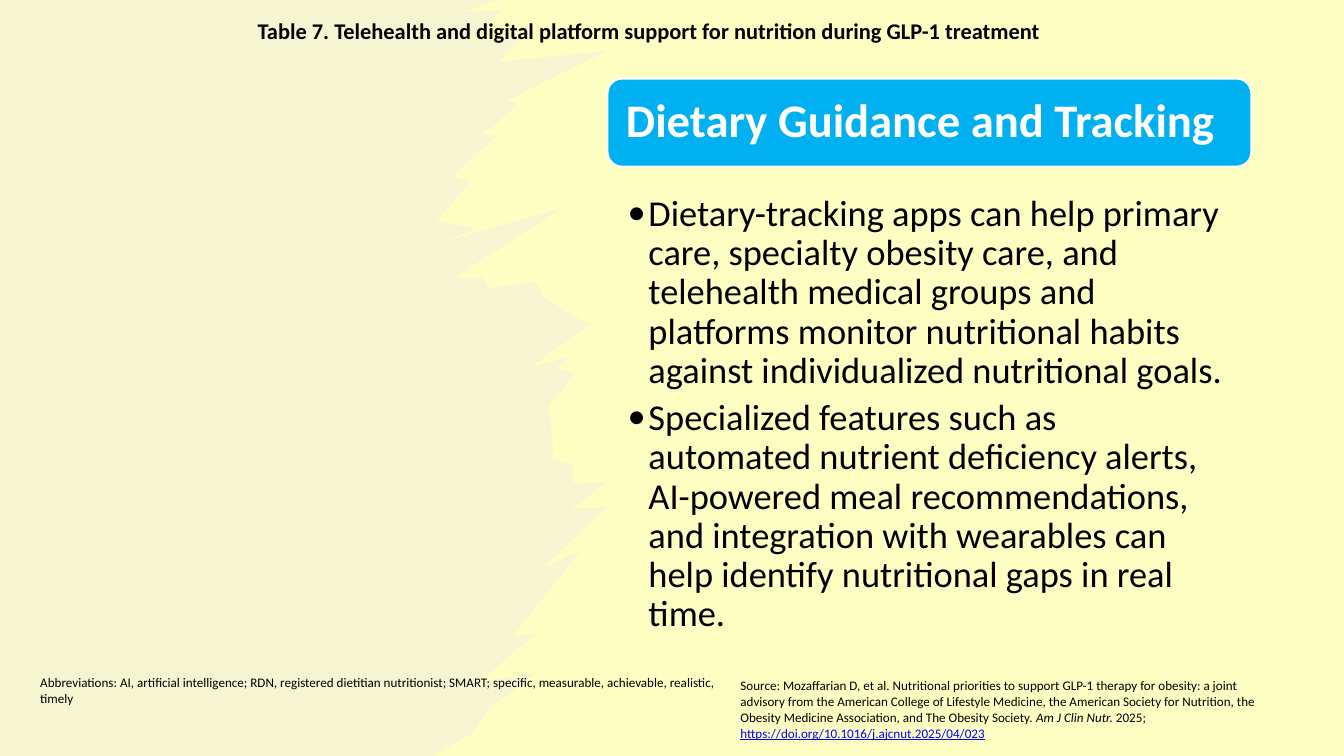
from dataclasses import dataclass
from itertools import chain

from lxml.etree import SubElement
from pptx import Presentation
from pptx.dml.color import RGBColor
from pptx.enum.shapes import MSO_SHAPE
from pptx.enum.text import MSO_ANCHOR, MSO_AUTO_SIZE, PP_ALIGN
from pptx.oxml.ns import qn
from pptx.util import Inches, Pt


@dataclass(frozen=True)
class Theme:
    font: str = "Calibri"
    paper: RGBColor = RGBColor(0xFD, 0xFF, 0xC2)
    brush: RGBColor = RGBColor(0xEE, 0xEC, 0xE1)
    banner: RGBColor = RGBColor(0x00, 0xB0, 0xF0)
    ink: RGBColor = RGBColor(0, 0, 0)
    white: RGBColor = RGBColor(0xFF, 0xFF, 0xFF)
    link: RGBColor = RGBColor(0, 0, 0xFF)
    caption_size: int = 24
    heading_size: int = 50
    body_size: int = 39
    note_size: int = 14
    note_gap: int = 6
    bullet_gap: int = 8
    tight_lines: float = 0.9


THEME = Theme()
WIDTH, HEIGHT = Inches(20), Inches(11.25)

# Shares of the slide, in percent: the banner and the bullets stand in one column.
COLUMN_LEFT, COLUMN_WIDTH = 45.2, 47.9

CAPTION = "Table 7. Telehealth and digital platform support for nutrition during GLP-1 treatment"
HEADING = "Dietary Guidance and Tracking"
GUIDANCE = [
    "Dietary-tracking apps can help primary care, specialty obesity care, and telehealth "
    "medical groups and platforms monitor nutritional habits against individualized "
    "nutritional goals.",
    "Specialized features such as automated nutrient deficiency alerts, AI-powered meal "
    "recommendations, and integration with wearables can help identify nutritional gaps "
    "in real time.",
]
ABBREVIATIONS = (
    "Abbreviations: AI, artificial intelligence; RDN, registered dietitian nutritionist; "
    "SMART; specific, measurable, achievable, realistic, timely"
)
SOURCE = (
    "Source: Mozaffarian D, et al. Nutritional priorities to support GLP-1 therapy for "
    "obesity: a joint advisory from the American College of Lifestyle Medicine, the American "
    "Society for Nutrition, the Obesity Medicine Association, and The Obesity Society. "
)
JOURNAL, YEAR = "Am J Clin Nutr. ", "2025; "
DOI = "https://doi.org/10.1016/j.ajcnut.2025/04/023"

# The brush stroke ends in bristles: each runs from a notch out to a tip (x, y in inches).
BRISTLES = {
    "top fringe": [
        ((6.89, 0.18), (7.48, 0.15)),
        ((6.96, 0.61), (7.77, 0.55)),
        ((7.41, 0.92), (9.03, 0.76)),
        ((7.55, 1.49), (7.72, 1.56)),
        ((7.17, 2.00), (7.39, 2.02)),
    ],
    "hollow": [
        ((6.75, 2.62), (7.00, 2.72)),
        ((6.50, 3.28), (7.09, 3.41)),
        ((6.53, 3.62), (8.35, 3.10)),
        ((6.77, 4.13), (7.19, 4.14)),
        ((7.28, 4.29), (7.97, 4.19)),
    ],
    "swell": [
        ((8.09, 4.43), (8.77, 4.83)),
        ((7.90, 5.46), (8.48, 5.30)),
        ((8.29, 5.48), (8.57, 5.57)),
        ((8.17, 6.02), (8.24, 6.71)),
        ((8.21, 6.84), (8.52, 6.90)),
        ((8.53, 7.20), (9.03, 7.18)),
        ((8.51, 7.57), (9.03, 7.55)),
    ],
    "tail": [
        ((8.07, 8.46), (8.65, 8.19)),
        ((7.63, 9.46), (7.96, 9.44)),
        ((7.12, 10.16), (7.98, 10.01)),
        ((7.28, 10.55), (7.02, 10.92)),
    ],
}
BRUSH_TOP, BRUSH_BOTTOM = (7.39, 0), (6.43, 11.25)


def box(left, top, width, height):
    """Turn percentages of the slide's size into lengths."""
    return [int(share * side / 100) for share, side in
            zip((left, top, width, height), (WIDTH, HEIGHT, WIDTH, HEIGHT))]


def format_runs(frame, size, color=THEME.ink, bold=False):
    for paragraph in frame.paragraphs:
        for run in paragraph.runs:
            run.font.name = THEME.font
            run.font.size = Pt(size)
            run.font.bold = bold
            run.font.color.rgb = color


def paint(shape, color):
    shape.shadow.inherit = False
    shape.fill.solid()
    shape.fill.fore_color.rgb = color


def add_brush_stroke(slide):
    """Draw the half-transparent stroke behind everything else."""
    bristles = chain.from_iterable(BRISTLES.values())
    ragged_edge = chain.from_iterable(bristles)
    outline = [BRUSH_TOP, *ragged_edge, BRUSH_BOTTOM, (0, 11.25)]

    builder = slide.shapes.build_freeform(0, 0)
    builder.add_line_segments([(Inches(x), Inches(y)) for x, y in outline])
    stroke = builder.convert_to_shape()
    paint(stroke, THEME.brush)
    stroke.line.fill.background()
    for color in stroke._element.spPr.iterfind(qn("a:solidFill") + "/" + qn("a:srgbClr")):
        SubElement(color, qn("a:alpha")).set("val", "50000")
    slide.shapes.title._element.addprevious(stroke._element)


def set_caption(slide, area):
    caption = slide.shapes.title
    caption.left, caption.top, caption.width, caption.height = area
    frame = caption.text_frame
    frame.text = CAPTION
    frame.vertical_anchor = MSO_ANCHOR.TOP
    frame.auto_size = MSO_AUTO_SIZE.SHAPE_TO_FIT_TEXT
    frame.paragraphs[0].alignment = PP_ALIGN.CENTER
    frame.paragraphs[0].space_after = Pt(THEME.note_gap)
    format_runs(frame, THEME.caption_size, bold=True)


def add_banner(slide, area):
    banner = slide.shapes.add_shape(MSO_SHAPE.ROUNDED_RECTANGLE, *area)
    paint(banner, THEME.banner)
    banner.line.color.rgb = THEME.white
    banner.line.width = Pt(2)
    frame = banner.text_frame
    frame.text = HEADING
    frame.margin_left = frame.margin_right = Inches(0.21)
    frame.vertical_anchor = MSO_ANCHOR.MIDDLE
    frame.paragraphs[0].alignment = PP_ALIGN.LEFT
    frame.paragraphs[0].line_spacing = THEME.tight_lines
    format_runs(frame, THEME.heading_size, THEME.white, bold=True)


def add_text(slide, area):
    frame = slide.shapes.add_textbox(*area).text_frame
    frame.word_wrap = True
    return frame


def add_bullets(slide, area, items):
    frame = add_text(slide, area)
    frame.margin_left, frame.margin_right = Inches(0.3), Inches(0.39)
    frame.margin_top = frame.margin_bottom = Inches(0.07)
    frame.text = "\n".join(items)
    hanging = Inches(0.31)
    for paragraph in frame.paragraphs:
        paragraph.line_spacing = THEME.tight_lines
        paragraph.space_after = Pt(THEME.bullet_gap)
        properties = paragraph._p.get_or_add_pPr()
        properties.set("marL", str(hanging))
        properties.set("indent", str(-hanging))
        SubElement(properties, qn("a:buFont")).set("typeface", THEME.font)
        SubElement(properties, qn("a:buChar")).set("char", "•")
    format_runs(frame, THEME.body_size)


def add_note(slide, area, *parts):
    """Add a small-print paragraph and return its runs, one for each part."""
    frame = add_text(slide, area)
    frame.auto_size = MSO_AUTO_SIZE.SHAPE_TO_FIT_TEXT
    paragraph = frame.paragraphs[0]
    paragraph.space_after = Pt(THEME.note_gap)
    for part in parts:
        paragraph.add_run().text = part
    format_runs(frame, THEME.note_size)
    return paragraph.runs


def main():
    deck = Presentation()
    deck.slide_width, deck.slide_height = WIDTH, HEIGHT
    slide = deck.slides.add_slide(deck.slide_layouts.get_by_name("Title Only"))
    slide.background.fill.solid()
    slide.background.fill.fore_color.rgb = THEME.paper

    add_brush_stroke(slide)
    set_caption(slide, box(2.65, 1.87, 91.25, 4.44))
    _, journal, _, doi = add_note(
        slide, box(54.6, 89.24, 41.5, 9.24), SOURCE, JOURNAL, YEAR, DOI)
    journal.font.italic = True
    doi.font.underline = True
    doi.font.color.rgb = THEME.link
    add_note(slide, box(2.5, 88.8, 51.25, 5.07), ABBREVIATIONS)
    add_banner(slide, box(COLUMN_LEFT, 10.4, COLUMN_WIDTH, 11.64))
    add_bullets(slide, box(COLUMN_LEFT, 25.16, COLUMN_WIDTH, 61.33), GUIDANCE)

    deck.save("out.pptx")


if __name__ == "__main__":
    main()
